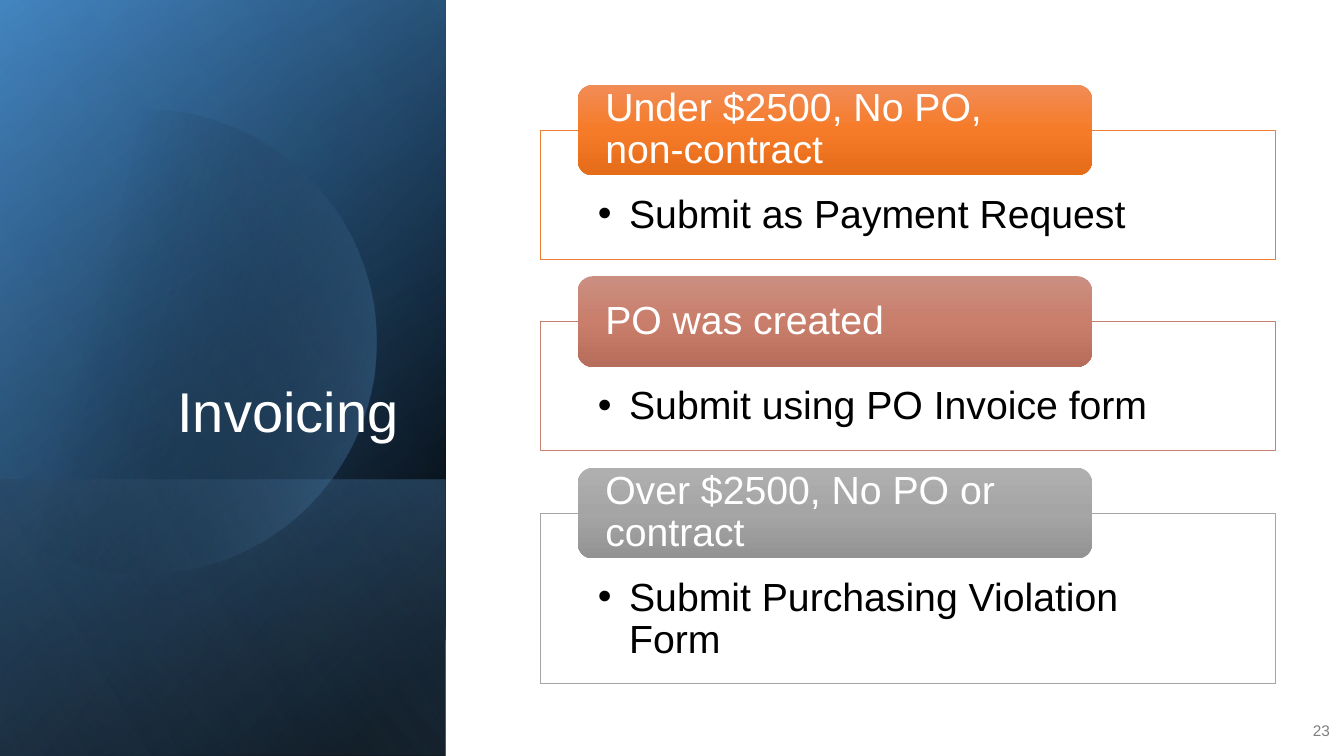
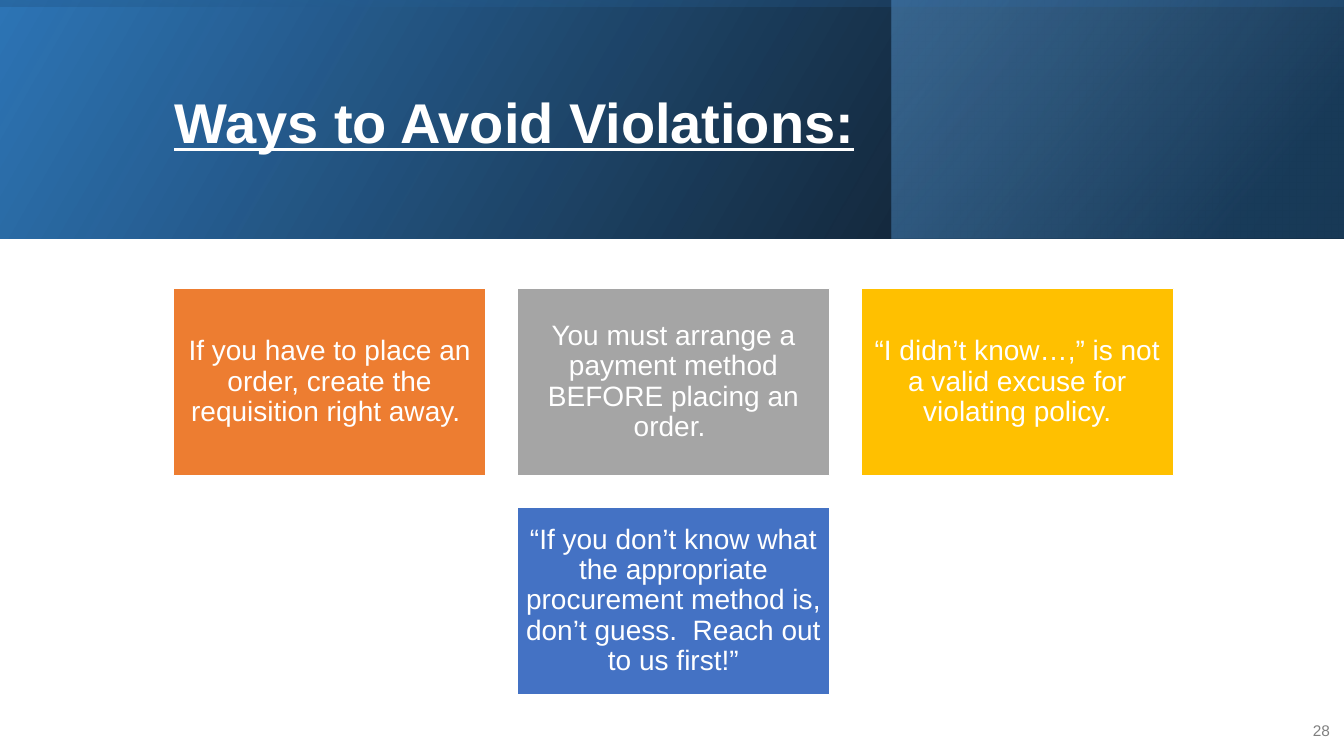
import math
from dataclasses import dataclass

from lxml import etree
from pptx import Presentation
from pptx.dml.color import RGBColor
from pptx.enum.shapes import MSO_SHAPE
from pptx.enum.text import MSO_ANCHOR, MSO_AUTO_SIZE, PP_ALIGN
from pptx.oxml.ns import qn
from pptx.util import Inches, Pt

RECTANGLE, ROUNDED = MSO_SHAPE.RECTANGLE, MSO_SHAPE.ROUNDED_RECTANGLE
TOP, MIDDLE, BOTTOM = MSO_ANCHOR.TOP, MSO_ANCHOR.MIDDLE, MSO_ANCHOR.BOTTOM
LEFT, CENTER, RIGHT = PP_ALIGN.LEFT, PP_ALIGN.CENTER, PP_ALIGN.RIGHT
TITLE_ONLY = 5


@dataclass(frozen=True)
class Theme:
    font: str = "Arial"
    white: str = "FFFFFF"
    black: str = "000000"
    blue: str = "2E75B6"
    light_blue: str = "5B9BD5"
    pale_blue: str = "9DC3E6"
    navy: str = "1F4E79"
    orange: str = "ED7D31"
    rose: str = "C48170"
    gray: str = "A5A5A5"
    gold: str = "FFC000"
    royal: str = "4472C4"
    number_gray: str = "808080"
    orange_shades: tuple = ("F18C57", "F67B28", "E56C19")
    rose_shades: tuple = ("CB8F81", "C97E6B", "B76D5B")
    gray_shades: tuple = ("AFAFAF", "A5A5A5", "939393")
    title_size: int = 40
    panel_size: int = 28
    card_size: int = 20
    number_size: int = 11


THEME = Theme()


def set_gradient(shape, stops, angle):
    """Fill with (position %, colour, opacity %) stops; angle runs clockwise."""
    shape.fill.background()
    no_fill = shape._element.spPr.find(qn("a:noFill"))
    gradient = etree.Element(qn("a:gradFill"), rotWithShape="1")
    stop_list = etree.SubElement(gradient, qn("a:gsLst"))
    for position, color, opacity in stops:
        stop = etree.SubElement(stop_list, qn("a:gs"), pos=str(position * 1000))
        color_element = etree.SubElement(stop, qn("a:srgbClr"), val=color)
        if opacity < 100:
            etree.SubElement(color_element, qn("a:alpha"), val=str(opacity * 1000))
    etree.SubElement(gradient, qn("a:lin"), ang=str(angle * 60000), scaled="0")
    no_fill.getparent().replace(no_fill, gradient)


def add_box(slide, box, kind=RECTANGLE, fill=None, line=None, line_width=1):
    shape = slide.shapes.add_shape(kind, *map(Inches, box))
    shape.shadow.inherit = False
    if fill:
        shape.fill.solid()
        shape.fill.fore_color.rgb = RGBColor.from_string(fill)
    if line:
        shape.line.color.rgb = RGBColor.from_string(line)
        shape.line.width = Pt(line_width)
    else:
        shape.line.fill.background()
    return shape


def add_gradient_box(slide, box, stops, angle, kind=RECTANGLE):
    shape = add_box(slide, box, kind)
    set_gradient(shape, stops, angle)
    return shape


def add_bullet(paragraph, indent):
    properties = paragraph._p.get_or_add_pPr()
    properties.set("marL", str(Inches(indent)))
    properties.set("indent", str(-Inches(indent)))
    etree.SubElement(properties, qn("a:buFont"), typeface=THEME.font)
    etree.SubElement(properties, qn("a:buChar"), char="•")


def write_text(shape, text, size, color=THEME.white, align=LEFT, anchor=MIDDLE,
               insets=(0.1, 0.05, 0.1, 0.05), bullet_indent=None):
    frame = shape.text_frame
    frame.word_wrap = True
    frame.auto_size = MSO_AUTO_SIZE.NONE
    frame.vertical_anchor = anchor
    (frame.margin_left, frame.margin_top,
     frame.margin_right, frame.margin_bottom) = map(Inches, insets)
    frame.text = text
    paragraph = frame.paragraphs[0]
    paragraph.alignment = align
    paragraph.line_spacing = 0.9
    if bullet_indent:
        add_bullet(paragraph, bullet_indent)
    paragraph.font.name = THEME.font
    paragraph.font.size = Pt(size)
    paragraph.font.color.rgb = RGBColor.from_string(color)
    return paragraph


def place_title(slide, box, text, **style):
    """Place the title placeholder in front of the band drawn so far."""
    title = slide.shapes.title
    title.left, title.top, title.width, title.height = map(Inches, box)
    slide.shapes._spTree.append(title._element)
    return write_text(title, text, THEME.title_size, **style)


def add_slide_number(slide, number):
    box = slide.shapes.add_textbox(*map(Inches, (12.8, 7.06, 0.49, 0.4)))
    write_text(box, str(number), THEME.number_size, THEME.number_gray, RIGHT)


def add_clipped_circle(slide, center_x, center_y, radius, edge):
    """Draw the part of a circle that lies to the right of a vertical edge."""
    limit = math.acos((edge - center_x) / radius)
    steps = 120
    angles = [limit * (2 * step / steps - 1) for step in range(steps + 1)]
    points = [(Inches(center_x + radius * math.cos(angle)),
               Inches(center_y + radius * math.sin(angle))) for angle in angles]
    builder = slide.shapes.build_freeform(*points[0])
    builder.add_line_segments(points[1:], close=True)
    circle = builder.convert_to_shape()
    circle.shadow.inherit = False
    circle.line.fill.background()
    set_gradient(circle, [(29, THEME.black, 0), (100, THEME.light_blue, 43)], 14)


def add_side_band(slide, box):
    left, top, width, height = box
    lower_height = 2.74
    lower_box = (left, top + height - lower_height, width, lower_height)
    add_gradient_box(slide, box, [(8, THEME.black, 100), (100, THEME.blue, 100)], 220)
    add_gradient_box(slide, box, [(0, THEME.black, 0), (99, THEME.light_blue, 46)], 240)
    add_gradient_box(slide, lower_box,
                     [(2, THEME.light_blue, 29), (100, THEME.black, 30)], 140)
    add_clipped_circle(slide, left + 1.43, top + 3.39, 2.3, left)
    add_gradient_box(slide, box, [(0, THEME.black, 0), (99, THEME.pale_blue, 11)], 150)


def add_top_band(slide, box):
    left, top, width, height = box
    end_width = 4.49
    end_box = (left + width - end_width, top, end_width, height)
    add_gradient_box(slide, box, [(0, THEME.black, 96), (100, THEME.blue, 100)], 210)
    add_gradient_box(slide, end_box,
                     [(19, THEME.navy, 68), (100, THEME.light_blue, 48)], 220)
    add_gradient_box(slide, box, [(23, THEME.blue, 16), (99, THEME.black, 45)], 100)


def add_panel(slide, box, heading, body, line, shades):
    left, top, width, _ = box
    frame = add_box(slide, box, fill=THEME.white, line=line, line_width=0.5)
    write_text(frame, body, THEME.panel_size, THEME.black, anchor=TOP,
               insets=(0.57, 0.64, 0.57, 0.22), bullet_indent=0.31)
    stops = [(position, shade, 100) for position, shade in zip((0, 50, 100), shades)]
    tab = add_gradient_box(slide, (left + 0.37, top - 0.45, width * 0.7, 0.9),
                           stops, 90, ROUNDED)
    write_text(tab, heading, THEME.panel_size, insets=(0.23, 0.04, 0.23, 0.04))


def add_panels(slide, left, top, width, panels, gap=0.62):
    for height, *content in panels:
        add_panel(slide, (left, top, width, height), *content)
        top += height + gap


def add_cards(slide, left, top, width, rows, gap=0.31):
    """Lay out rows of cards, each row centred in the width of the first."""
    columns = len(rows[0])
    card_width = (width - gap * (columns - 1)) / columns
    card_height = card_width * 0.6
    for row_index, row in enumerate(rows):
        row_width = len(row) * (card_width + gap) - gap
        row_left = left + (width - row_width) / 2
        row_top = top + row_index * (card_height + gap)
        for column, (text, color) in enumerate(row):
            box = (row_left + column * (card_width + gap), row_top,
                   card_width, card_height)
            card = add_box(slide, box, fill=color, line=THEME.white)
            write_text(card, text, THEME.card_size, align=CENTER, insets=(0.08,) * 4)


def add_title_slide(presentation):
    return presentation.slides.add_slide(presentation.slide_layouts[TITLE_ONLY])


def build_invoicing(presentation):
    slide = add_title_slide(presentation)
    add_side_band(slide, (0, 0, 4.42, 7.5))
    place_title(slide, (0.64, 1.84, 3.41, 2.62), "Invoicing", align=RIGHT, anchor=BOTTOM)
    add_slide_number(slide, 23)
    add_panels(slide, 5.36, 1.29, 7.29, [
        (1.28, "Under $2500, No PO, non-contract", "Submit as Payment Request",
         THEME.orange, THEME.orange_shades),
        (1.28, "PO was created", "Submit using PO Invoice form",
         THEME.rose, THEME.rose_shades),
        (1.69, "Over $2500, No PO or contract", "Submit Purchasing Violation Form",
         THEME.gray, THEME.gray_shades),
    ])


def build_violations(presentation):
    slide = add_title_slide(presentation)
    add_top_band(slide, (0, 0, 13.33, 2.37))
    title = place_title(slide, (1.51, 0.38, 10.63, 1.72), "Ways to Avoid Violations:",
                        insets=(0.22, 0.05, 0.1, 0.05))
    title.font.bold = True
    title.font.underline = True
    add_slide_number(slide, 28)
    add_cards(slide, 1.72, 2.86, 9.92, [
        [("If you have to place an order, create the requisition right away. ",
          THEME.orange),
         ("You must arrange a payment method BEFORE placing an order. ", THEME.gray),
         ("“I didn’t know…,” is not a valid excuse for violating policy.", THEME.gold)],
        [("“If you don’t know what the appropriate procurement method is, "
          "don’t guess.  Reach out to us first!”", THEME.royal)],
    ])


def main():
    presentation = Presentation()
    presentation.slide_width = Inches(13.33)
    presentation.slide_height = Inches(7.5)
    build_invoicing(presentation)
    build_violations(presentation)
    presentation.save("out.pptx")


if __name__ == "__main__":
    main()
